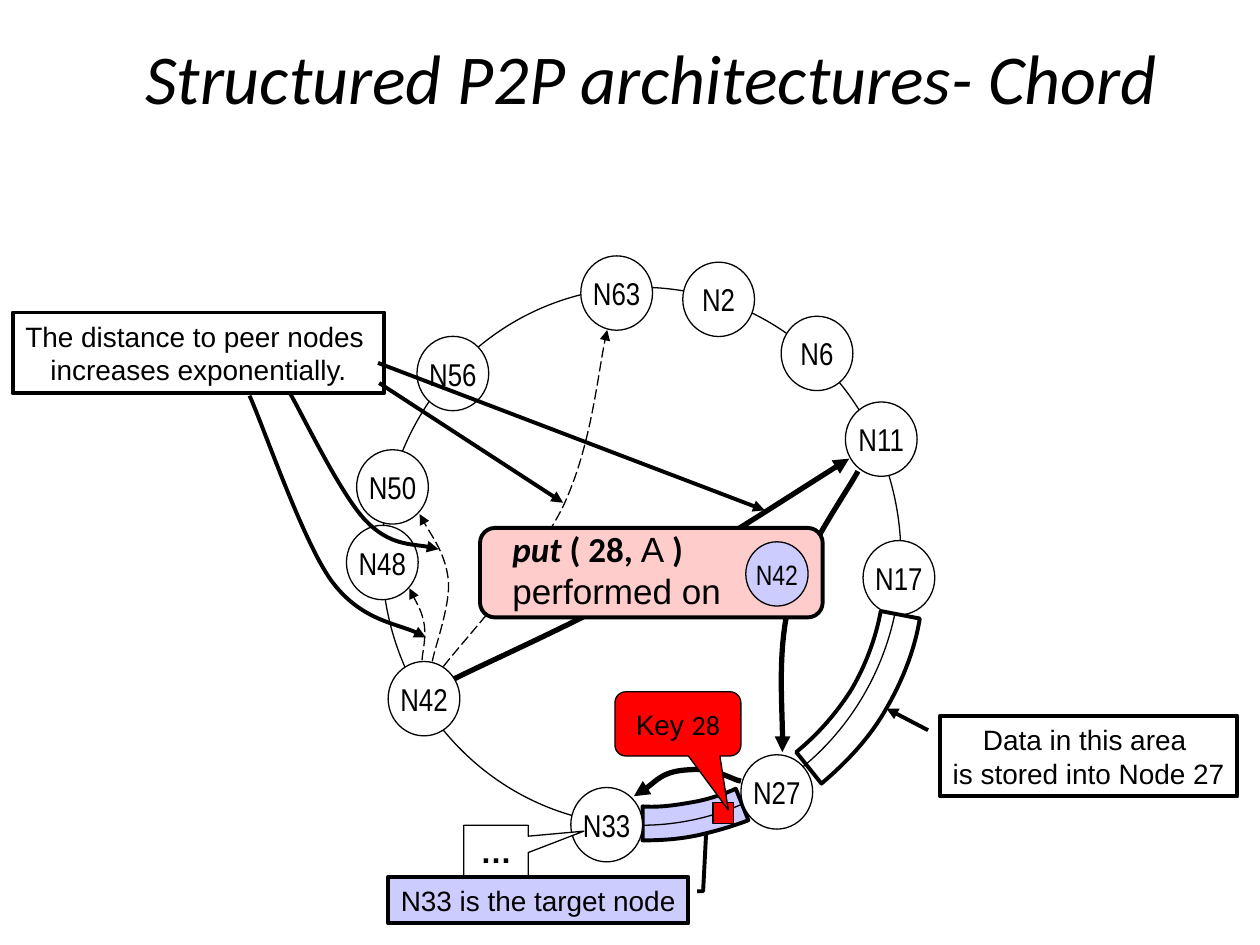
from lxml.etree import SubElement
from pptx import Presentation
from pptx.dml.color import RGBColor
from pptx.enum.dml import MSO_LINE
from pptx.enum.shapes import MSO_CONNECTOR, MSO_SHAPE
from pptx.enum.text import MSO_ANCHOR, MSO_AUTO_SIZE, PP_ALIGN
from pptx.oxml.ns import qn
from pptx.util import Pt

COLORS = {"ink": "000000", "paper": "FFFFFF", "target": "CCCCFF",
          "request": "FFCCCC", "key": "FF0000"}

NODE_SIZE = (41, 42.5)
NODES = {
    "N42": (221.8, 378), "N27": (423.4, 431.3), "N11": (483.1, 229.7),
    "N2": (390.2, 149.8), "N56": (238.3, 192.2), "N50": (203.8, 257),
    "N17": (493.2, 308.9), "N63": (331.9, 146.2), "N48": (198, 300.2),
    "N6": (446.4, 180.7), "N33": (326.2, 450),
}

# Each outline is a start point followed by segments:
# one point makes a straight line, three make a Bézier curve.
N33_BAND = ((420.5, 450.7), [
    [(412.6, 454.3), (403.2, 457.2), (394.6, 458.6)],
    [(385.9, 460.1), (376.6, 461.5), (367.2, 460.8)],
    [(367.2, 480.2)],
    [(378, 480.2), (388.1, 479.5), (398.2, 477.4)],
    [(408.2, 475.2), (418.3, 472.3), (427.7, 468.7)]])
N27_BAND = ((503.3, 349.2), [
    [(500.4, 365), (494.6, 380.2), (486.7, 393.8)],
    [(478.1, 407.5), (467.3, 419.8), (455, 429.8)],
    [(469.4, 447.8)],
    [(483.8, 435.6), (496.8, 421.9), (506.2, 405.4)],
    [(515.5, 389.5), (522.7, 371.5), (525.6, 353.5)]])
N42_TO_N11 = ((259.2, 388.1), [
    [(277.9, 378.7), (329.8, 355.7), (367.2, 334.8)],
    [(406.1, 313.2), (460.8, 277.2), (485.3, 262.1)]])
FINGERS = [
    ((241.2, 377.3), [[(241.2, 373.7), (243.4, 366.5), (242.6, 357.8)],
                      [(241.2, 349.2), (236.2, 341.3), (234, 336.2)]]),
    ((247, 378), [[(248.4, 370.1), (257, 347), (256.3, 332.6)],
                  [(254.9, 316.8), (243.4, 301.7), (239.8, 293.8)]]),
    ((253.4, 380.9), [[(265, 365.8), (306, 321.8), (321.8, 289.4)],
                      [(337.7, 255.6), (342, 209.5), (347, 188.6)]]),
]
HOPS = [
    ((490.3, 269.3), [[(483.8, 281.5), (458.6, 316.8), (451.4, 343.4)],
                      [(444.2, 370.8), (447.8, 411.8), (447.1, 429.8)]]),
    ((423.4, 446.4), [[(418.3, 445.7), (409, 438.5), (393.8, 439.9)],
                      [(378.7, 440.6), (368.6, 452.2), (362.2, 455)]]),
]
CURVED_POINTERS = [
    ((142.6, 226.1), [[(150.5, 243.4), (172.8, 308.9), (189.4, 331.9)],
                      [(205.9, 354.2), (232.6, 357.1), (243.4, 364.3)]]),
    ((165.6, 224.6), [[(172.8, 236.9), (194.4, 282.2), (208.8, 297.4)],
                      [(222.5, 311.8), (241.9, 311), (250.6, 313.9)]]),
]
STRAIGHT_POINTERS = [(216, 207.4, 437, 291.6), (216.7, 218.9, 321.8, 287.3)]

NODE_FONT = {"name": "Arial Narrow", "size": Pt(18)}
NOTE_FONT = {"name": "Arial", "size": Pt(16)}
PUT_FONT = {"name": "Calibri", "size": Pt(20), "bold": True}
PLAIN_FONT = {"name": "Arial", "size": Pt(20)}


def color(name):
    return RGBColor.from_string(COLORS[name])


def apply_format(target, values):
    for name, value in values.items():
        setattr(target, name, value)


def style_line(item, width, dashed=False, arrow=False):
    item.line.color.rgb = color("ink")
    item.line.width = Pt(width)
    if dashed:
        item.line.dash_style = MSO_LINE.LONG_DASH
    if arrow:
        SubElement(item.line._get_or_add_ln(), qn("a:tailEnd"), type="triangle")


def style_shape(shape, fill, width, **line_options):
    shape.shadow.inherit = False
    if fill:
        shape.fill.solid()
        shape.fill.fore_color.rgb = color(fill)
    else:
        shape.fill.background()
    style_line(shape, width, **line_options)


def add_span(para, text, font):
    span = para.add_run()
    span.text = text
    apply_format(span.font, font)
    span.font.color.rgb = color("ink")


def set_frame(box, anchor=MSO_ANCHOR.MIDDLE, margins=(7.2, 3.6), wrap=True):
    side, end = map(Pt, margins)
    apply_format(box.text_frame, {
        "margin_left": side, "margin_right": side, "margin_top": end,
        "margin_bottom": end, "vertical_anchor": anchor, "word_wrap": wrap})


def write_lines(box, lines, font):
    """Write centred lines into one paragraph."""
    para = box.text_frame.paragraphs[0]
    para.alignment = PP_ALIGN.CENTER
    for number, line in enumerate(lines):
        if number:
            para.add_line_break()
        add_span(para, line, font)


def add_box(page, kind, bounds, fill, width=0.75, adjust=(), **line_options):
    box = page.shapes.add_shape(kind, *map(Pt, bounds))
    for number, value in enumerate(adjust):
        box.adjustments[number] = value
    style_shape(box, fill, width, **line_options)
    return box


def add_node(page, name, bounds, fill="paper", font=NODE_FONT):
    node = add_box(page, MSO_SHAPE.OVAL, bounds, fill)
    set_frame(node, margins=(0, 0), wrap=False)
    write_lines(node, [name], font)


def add_note(page, kind, bounds, fill, lines, **options):
    note = add_box(page, kind, bounds, fill, width=2.25, **options)
    set_frame(note, wrap=False)
    write_lines(note, lines, NOTE_FONT)


def add_outline(page, outline, width, fill=None, close=False, **line_options):
    """Draw lines and Bézier curves, turning each three-point segment into a curve."""
    start, segments = outline
    builder = page.shapes.build_freeform(*map(Pt, start), scale=1.0)
    points = [tuple(map(Pt, point)) for segment in segments for point in segment]
    builder.add_line_segments(points, close=close)
    shape = builder.convert_to_shape()
    steps = iter(list(shape._element.iter(qn("a:lnTo"))))
    for segment in segments:
        parts = [next(steps) for _ in segment]
        if len(parts) == 3:
            parts[0].tag = qn("a:cubicBezTo")
            for part in parts[1:]:
                parts[0].append(part[0])
                part.getparent().remove(part)
    style_shape(shape, fill, width, **line_options)


def add_pointer(page, ends):
    pointer = page.shapes.add_connector(MSO_CONNECTOR.STRAIGHT, *map(Pt, ends))
    style_line(pointer, 2.25, arrow=True)
    SubElement(pointer._element.spPr, qn("a:effectLst"))


def add_title(page, text):
    title = page.shapes.title
    apply_format(title, {"left": Pt(48), "top": Pt(16), "width": Pt(648), "height": Pt(90)})
    set_frame(title, MSO_ANCHOR.TOP)
    title.text_frame.auto_size = MSO_AUTO_SIZE.NONE
    write_lines(title, [text], {"name": "Calibri", "size": Pt(40), "italic": True})


def add_request(page):
    add_box(page, MSO_SHAPE.ROUNDED_RECTANGLE, (274.3, 301.7, 195.8, 51.1), "request", 2.25)
    box = page.shapes.add_textbox(*map(Pt, (285.8, 298.1, 141.1, 55.4)))
    set_frame(box, MSO_ANCHOR.TOP, wrap=False)
    call = box.text_frame.paragraphs[0]
    add_span(call, "put ", PUT_FONT | {"italic": True})
    add_span(call, "( 28, ", PUT_FONT)
    add_span(call, "A ", PLAIN_FONT)
    add_span(call, ")", PUT_FONT)
    add_span(box.text_frame.add_paragraph(), "performed on", PLAIN_FONT)
    add_node(page, "N42", (426.2, 309.6, 35.6, 36.7), "target", NODE_FONT | {"size": Pt(16)})


def add_key(page):
    add_box(page, MSO_SHAPE.RECTANGLE, (407.5, 458.6, 11.5, 12.2), "key")
    key = add_box(page, MSO_SHAPE.ROUNDED_RECTANGULAR_CALLOUT, (351.4, 395.3, 72, 36.7),
                  "key", adjust=(0.4, 1.34, 0.17))
    set_frame(key)
    write_lines(key, ["Key "], NOTE_FONT)
    add_span(key.text_frame.paragraphs[0], "28", NOTE_FONT | {"name": "Calibri"})


def main():
    deck = Presentation()
    deck.slide_width, deck.slide_height = Pt(720), Pt(540)
    page = deck.slides.add_slide(deck.slide_layouts[5])
    add_title(page, "Structured P2P architectures- Chord")

    add_outline(page, N33_BAND, 2.25, fill="target", close=True)
    add_outline(page, N42_TO_N11, 3, arrow=True)
    add_box(page, MSO_SHAPE.OVAL, (218.2, 164.2, 296.6, 307.4), None)
    for name, corner in NODES.items():
        add_node(page, name, corner + NODE_SIZE)
    for finger in FINGERS:
        add_outline(page, finger, 0.75, dashed=True, arrow=True)
    for hop in HOPS:
        add_outline(page, hop, 3, arrow=True)

    dots = add_box(page, MSO_SHAPE.RECTANGULAR_CALLOUT, (265, 471.6, 36.9, 37.4),
                   "paper", adjust=(1.36, -0.41))
    set_frame(dots, MSO_ANCHOR.TOP)
    write_lines(dots, ["…"], {"name": "Arial", "size": Pt(18), "bold": True})
    add_request(page)
    add_note(page, MSO_SHAPE.LINE_CALLOUT_2, (221.8, 501.1, 171.4, 26.6), "target",
             ["N33 is the target node"], adjust=(0.31, 1.03, 0.31, 1.05, -0.93, 1.06))
    add_key(page)
    add_outline(page, N27_BAND, 2.25, close=True)
    add_note(page, MSO_SHAPE.LINE_CALLOUT_1, (537.1, 409, 169.9, 46.1), "paper",
             ["Data in this area ", "is stored into Node 27"],
             adjust=(0.18, -0.04, -0.09, -0.18), arrow=True)
    add_note(page, MSO_SHAPE.RECTANGLE, (7.2, 178.6, 212.4, 46.1), "paper",
             ["The distance to peer nodes ", "increases exponentially."])
    for ends in STRAIGHT_POINTERS:
        add_pointer(page, ends)
    for pointer in CURVED_POINTERS:
        add_outline(page, pointer, 2.25, arrow=True)
    deck.save("out.pptx")


if __name__ == "__main__":
    main()
